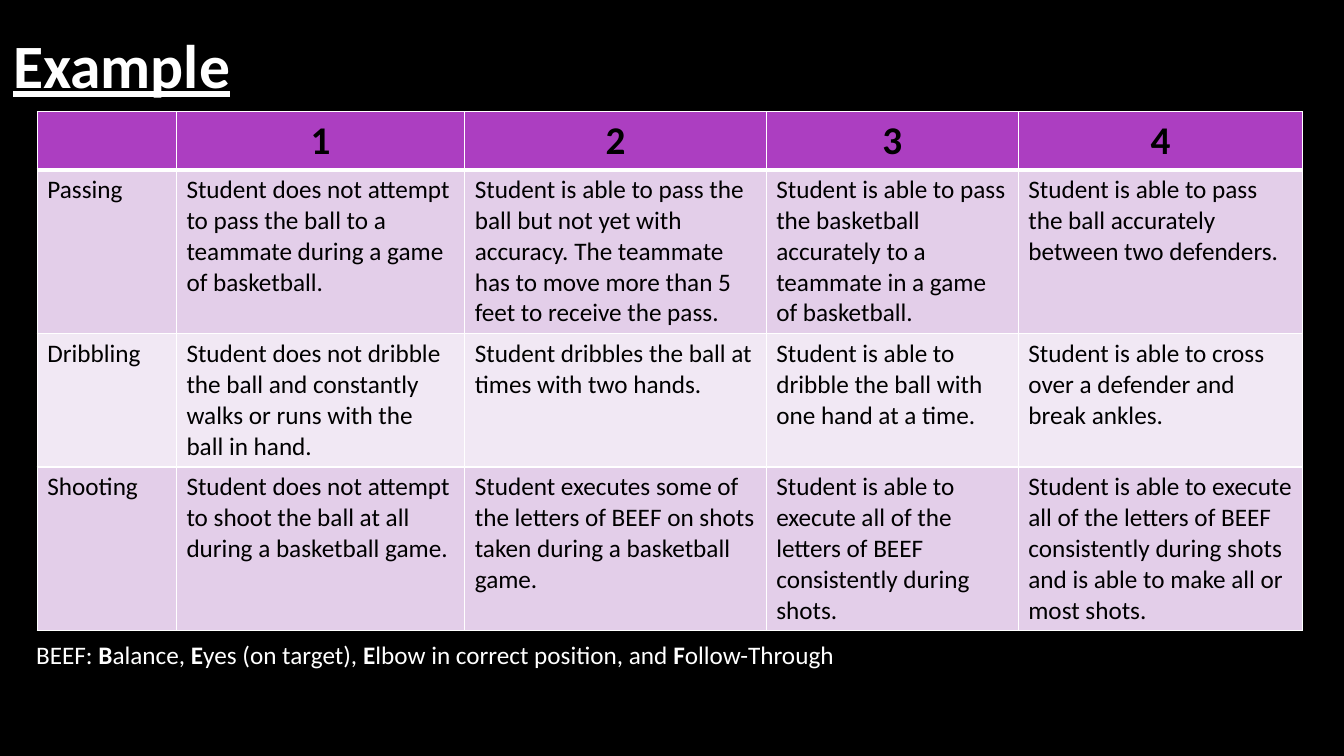
"""Build the basketball skills rubric slide."""
from typing import Any, NamedTuple

from lxml.etree import SubElement
from pptx import Presentation
from pptx.dml.color import RGBColor
from pptx.enum.text import MSO_ANCHOR, MSO_AUTO_SIZE, PP_ALIGN
from pptx.oxml import parse_xml
from pptx.oxml.ns import nsdecls, qn
from pptx.util import Emu, Pt

EMU_PER_PX = 9144
BLACK = RGBColor(0x00, 0x00, 0x00)
WHITE = RGBColor(0xFF, 0xFF, 0xFF)
PURPLE = RGBColor(0xAC, 0x3E, 0xC1)
LILAC = RGBColor(0xE3, 0xCE, 0xE9)
PALE_LILAC = RGBColor(0xF1, 0xE8, 0xF4)


class Box(NamedTuple):
    left: int
    top: int
    width: int
    height: int


class Skill(NamedTuple):
    name: str
    levels: tuple[str, ...]


TITLE_BOX = Box(3, 16, 1261, 94)
TABLE_BOX = Box(37, 111, 1255, 507)
NOTE_BOX = Box(26, 629, 1257, 40)
COLUMN_WIDTHS = (138, 286, 299, 250, 282)
HEADER_HEIGHT = 57
SKILL_HEIGHT = 128

TITLE_FORMAT = {"name": "Calibri", "size": Pt(44), "bold": True, "underline": True}
HEADER_FORMAT = {"name": "Calibri", "size": Pt(28), "bold": True}
BODY_FORMAT = {"name": "Calibri", "size": Pt(18), "bold": False}

HEADER = ("", "1", "2", "3", "4")
SKILLS = (
    Skill("Passing", (
        "Student does not attempt to pass the ball to a teammate during a game of basketball.",
        "Student is able to pass the ball but not yet with accuracy. "
        "The teammate has to move more than 5 feet to receive the pass.",
        "Student is able to pass the basketball accurately to a teammate in a game of basketball.",
        "Student is able to pass the ball accurately between two defenders.",
    )),
    Skill("Dribbling", (
        "Student does not dribble the ball and constantly walks or runs with the ball in hand.",
        "Student dribbles the ball at times with two hands.",
        "Student is able to dribble the ball with one hand at a time.",
        "Student is able to cross over a defender and break ankles.",
    )),
    Skill("Shooting", (
        "Student does not attempt to shoot the ball at all during a basketball game.",
        "Student executes some of the letters of BEEF on shots taken during a basketball game.",
        "Student is able to execute all of the letters of BEEF consistently during shots.",
        "Student is able to execute all of the letters of BEEF consistently during shots "
        "and is able to make all or most shots.",
    )),
)
NOTE_PARTS = (
    ("BEEF: ", False), ("B", True), ("alance, ", False), ("E", True),
    ("yes (on target), ", False), ("E", True),
    ("lbow in correct position, and ", False), ("F", True), ("ollow-Through", False),
)


def px(length: int) -> Emu:
    return Emu(length * EMU_PER_PX)


def place(box: Box) -> tuple[Emu, ...]:
    return tuple(px(length) for length in box)


def format_font(font: Any, values: dict[str, Any], color: RGBColor) -> None:
    for name, value in values.items():
        setattr(font, name, value)
    font.color.rgb = color


def add_borders(cell: Any, top: int, bottom: int) -> None:
    properties = cell._tc.get_or_add_tcPr()
    widths = {"lnL": 1, "lnR": 1, "lnT": top, "lnB": bottom}
    for index, (side, width) in enumerate(widths.items()):
        line = parse_xml(f'<a:{side} {nsdecls("a")} w="{Pt(width)}"/>')
        fill = SubElement(line, qn("a:solidFill"))
        SubElement(fill, qn("a:srgbClr"), val=str(WHITE))
        properties.insert(index, line)


def draw_title(slide: Any) -> None:
    title = slide.shapes.title
    title.left, title.top, title.width, title.height = place(TITLE_BOX)
    frame = title.text_frame
    frame.text = "Example"
    frame.vertical_anchor = MSO_ANCHOR.MIDDLE
    paragraph = frame.paragraphs[0]
    paragraph.alignment = PP_ALIGN.LEFT
    format_font(paragraph.runs[0].font, TITLE_FORMAT, WHITE)


def draw_rubric(slide: Any) -> None:
    rows = (HEADER, *((skill.name, *skill.levels) for skill in SKILLS))
    table = slide.shapes.add_table(len(rows), len(HEADER), *place(TABLE_BOX)).table
    for column, width in zip(table.columns, COLUMN_WIDTHS):
        column.width = px(width)
    for row_index, texts in enumerate(rows):
        is_header = row_index == 0
        table.rows[row_index].height = px(HEADER_HEIGHT if is_header else SKILL_HEIGHT)
        band = LILAC if row_index % 2 else PALE_LILAC
        for column_index, text in enumerate(texts):
            cell = table.cell(row_index, column_index)
            cell.fill.solid()
            cell.fill.fore_color.rgb = PURPLE if is_header else band
            add_borders(cell, 3 if row_index == 1 else 1, 3 if is_header else 1)
            paragraph = cell.text_frame.paragraphs[0]
            paragraph.alignment = PP_ALIGN.CENTER if is_header else PP_ALIGN.LEFT
            if text:
                run = paragraph.add_run()
                run.text = text
                format_font(run.font, HEADER_FORMAT if is_header else BODY_FORMAT, BLACK)


def draw_note(slide: Any) -> None:
    frame = slide.shapes.add_textbox(*place(NOTE_BOX)).text_frame
    frame.word_wrap = True
    frame.auto_size = MSO_AUTO_SIZE.SHAPE_TO_FIT_TEXT
    for text, bold in NOTE_PARTS:
        run = frame.paragraphs[0].add_run()
        run.text = text
        format_font(run.font, BODY_FORMAT | {"bold": bold}, WHITE)


def main() -> None:
    presentation = Presentation()
    presentation.slide_width = px(1333)
    presentation.slide_height = px(750)
    slide = presentation.slides.add_slide(presentation.slide_layouts.get_by_name("Title Only"))
    slide.background.fill.solid()
    slide.background.fill.fore_color.rgb = BLACK
    draw_title(slide)
    draw_rubric(slide)
    draw_note(slide)
    presentation.save("out.pptx")


if __name__ == "__main__":
    main()
